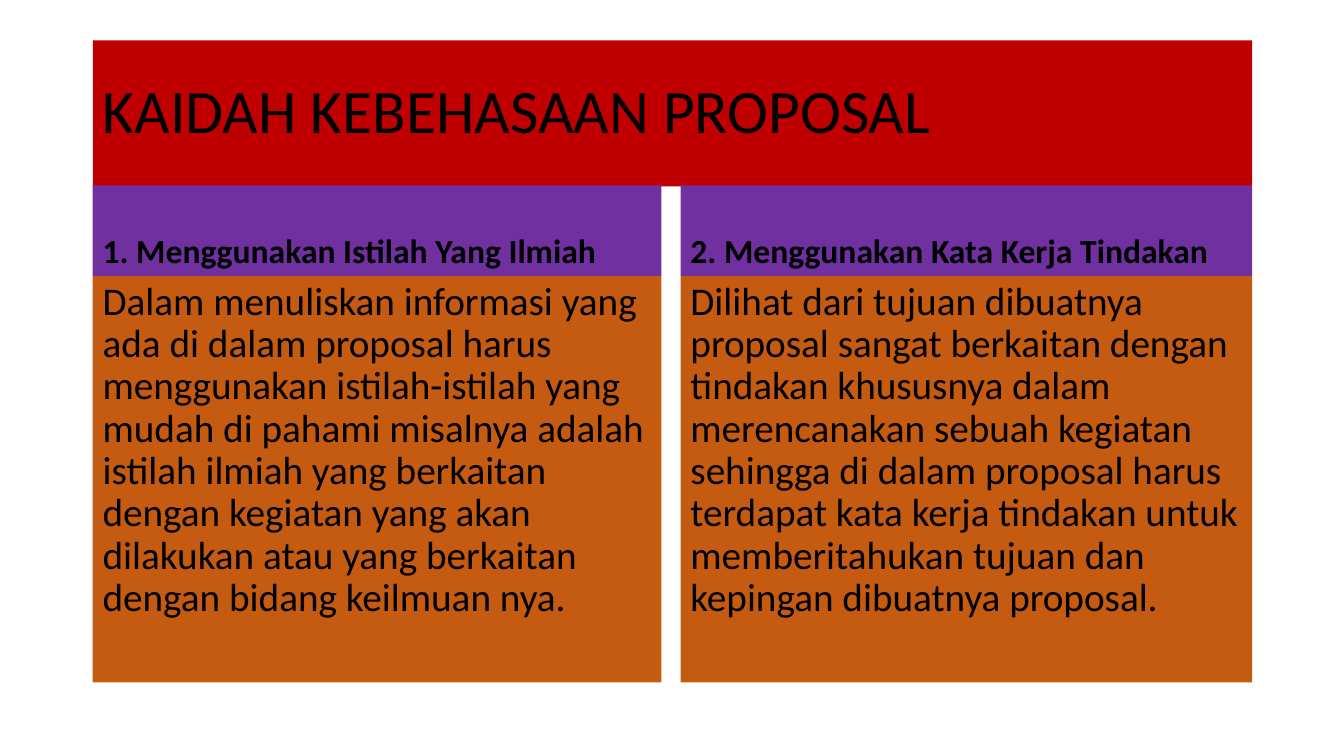
from pptx import Presentation
from pptx.dml.color import RGBColor
from pptx.enum.shapes import MSO_SHAPE as Shape
from pptx.enum.text import MSO_ANCHOR as Anchor, MSO_AUTO_SIZE as Fit, PP_ALIGN as Align
from pptx.util import Pt

PX = 9144  # EMU per px, 100 px to the inch
BLACK = RGBColor(0x00, 0x00, 0x00)
RED = RGBColor(0xC0, 0x00, 0x00)
PURPLE = RGBColor(0x70, 0x30, 0xA0)
ORANGE = RGBColor(0xC5, 0x5A, 0x11)

LEFT, TOP = 92, 184
HEAD_H, BODY_H = 90, 403

# Left edge, width, heading and body of each column
COLUMNS = [
    (LEFT, 564, "1. Menggunakan Istilah Yang Ilmiah",
     "Dalam menuliskan informasi yang ada di dalam proposal harus "
     "menggunakan istilah-istilah yang mudah di pahami misalnya adalah "
     "istilah ilmiah yang berkaitan dengan kegiatan yang akan dilakukan "
     "atau yang berkaitan dengan bidang keilmuan nya."),
    (675, 567, "2. Menggunakan Kata Kerja Tindakan",
     "Dilihat dari tujuan dibuatnya proposal sangat berkaitan dengan "
     "tindakan khususnya dalam merencanakan sebuah kegiatan sehingga di "
     "dalam proposal harus terdapat kata kerja tindakan untuk "
     "memberitahukan tujuan dan kepingan dibuatnya proposal."),
]


class Deck:
    font = "Calibri"

    def __init__(self, width, height):
        self.show = Presentation()
        self.show.slide_width = width * PX
        self.show.slide_height = height * PX
        self.slide = self.show.slides.add_slide(self.show.slide_layouts[5])

    def label(self, shape, text, size, anchor, bold=False):
        frame = shape.text_frame
        frame.word_wrap = True
        frame.auto_size = Fit.NONE
        frame.vertical_anchor = anchor
        para = frame.paragraphs[0]
        para.alignment = Align.LEFT
        para.line_spacing = 0.9
        run = para.add_run()
        run.text = text
        run.font.name = self.font
        run.font.size = Pt(size)
        run.font.bold = bold
        run.font.color.rgb = BLACK

    def paint(self, shape, fill):
        shape.fill.solid()
        shape.fill.fore_color.rgb = fill
        shape.line.fill.background()

    def title(self, x, y, w, h, text, size, fill):
        head = self.slide.shapes.title
        head.left, head.top, head.width, head.height = (
            n * PX for n in (x, y, w, h))
        self.paint(head, fill)
        self.label(head, text, size, Anchor.MIDDLE)

    def panel(self, x, y, w, h, text, size, fill, anchor, bold=False):
        box = self.slide.shapes.add_shape(
            Shape.RECTANGLE, *(n * PX for n in (x, y, w, h)))
        box.shadow.inherit = False
        self.paint(box, fill)
        self.label(box, text, size, anchor, bold)


def main():
    deck = Deck(1333, 750)

    # Title band
    deck.title(LEFT, 40, 1150, 145, "KAIDAH KEBEHASAAN PROPOSAL", 44, RED)

    # Two columns, each a heading over its body
    for x, w, head, body in COLUMNS:
        deck.panel(x, TOP, w, HEAD_H, head, 24, PURPLE, Anchor.BOTTOM, True)
        deck.panel(x, TOP + HEAD_H, w, BODY_H, body, 28, ORANGE, Anchor.TOP)

    deck.show.save("out.pptx")


if __name__ == "__main__":
    main()
